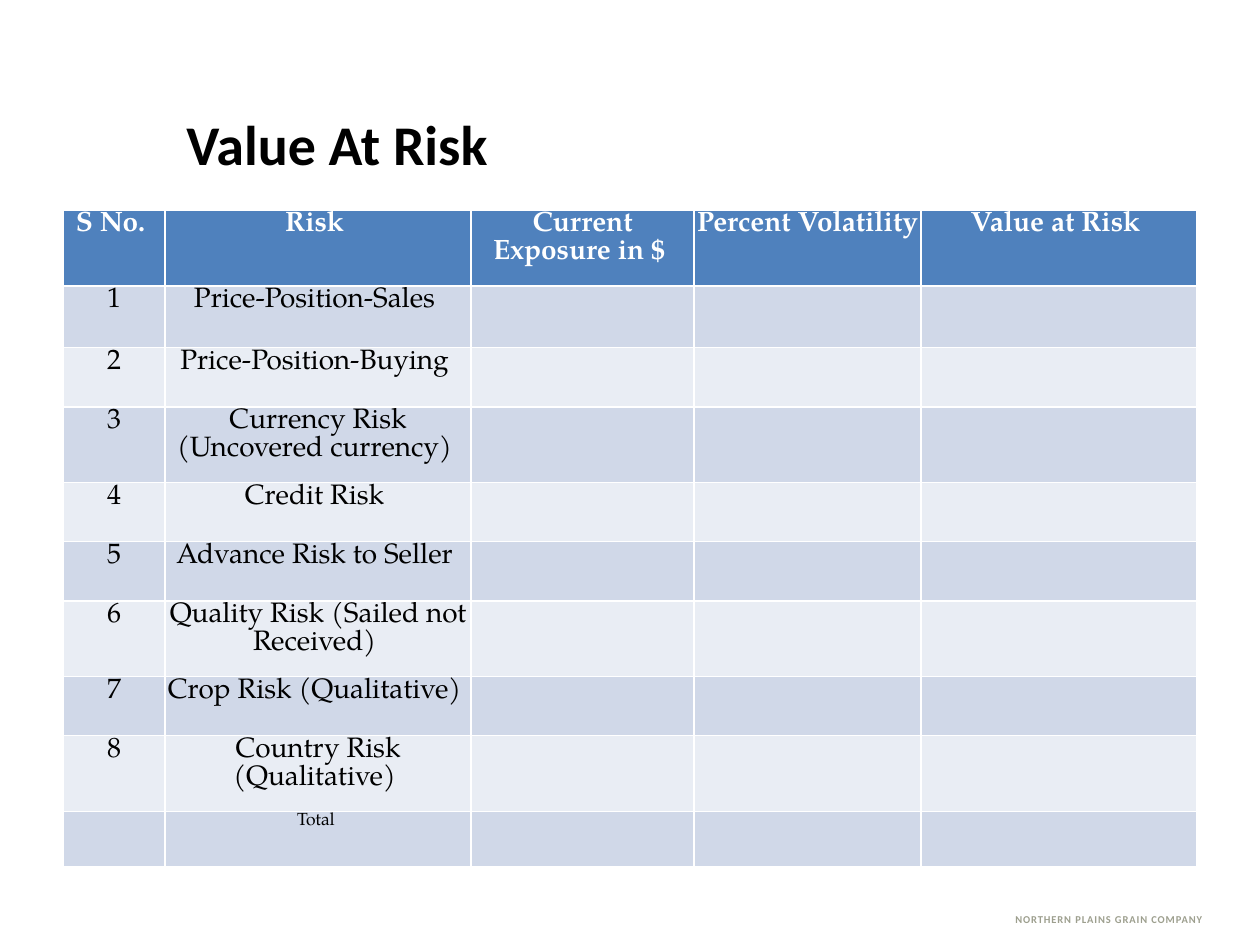
from lxml.etree import SubElement
from pptx import Presentation
from pptx.dml.color import RGBColor
from pptx.enum.text import MSO_ANCHOR as Anchor, MSO_AUTO_SIZE as AutoSize, PP_ALIGN as Align
from pptx.oxml.ns import qn
from pptx.util import Inches, Pt

TABLE_FONT = "TeX Gyre Pagella"
COL_WIDTHS = [0.81, 2.43, 1.77, 1.8, 2.19]
ROW_HEIGHTS = [0.6, 0.49, 0.47, 0.6, 0.47, 0.47, 0.6, 0.47, 0.6, 0.44]
HEADERS = ["S No. ", "Risk ", "Current Exposure in $ ", "Percent Volatility ", "Value at Risk "]
RISKS = [
    "Price-Position-Sales ",
    "Price-Position-Buying ",
    "Currency Risk (Uncovered currency) ",
    "Credit Risk ",
    "Advance Risk to Seller ",
    "Quality Risk (Sailed not Received) ",
    "Crop Risk (Qualitative) ",
    "Country Risk (Qualitative) ",
]


def rgb(value):
    """Return the colour for a hex string."""
    return RGBColor.from_string(value)


def add_run(p, text, size, font, color, bold=False):
    """Append a formatted run to a paragraph and return it."""
    r = p.add_run()
    r.text = text
    r.font.size = Pt(size)
    r.font.name = font
    r.font.bold = bold
    r.font.color.rgb = rgb(color)
    return r


def add_title(slide, left, top, width, height):
    """Place the slide title in the title placeholder."""
    sp = slide.shapes.title
    sp.left, sp.top, sp.width, sp.height = map(Inches, (left, top, width, height))
    tf = sp.text_frame
    tf.word_wrap = True
    tf.auto_size = AutoSize.NONE
    tf.vertical_anchor = Anchor.TOP
    p = tf.paragraphs[0]
    p.alignment = Align.LEFT
    add_run(p, "Value At Risk", 32, "Calibri", "000000", True)


def set_borders(cell, widths):
    """Draw white cell borders from a mapping of side to points."""
    tcPr = cell._tc.get_or_add_tcPr()
    for i, side in enumerate("LRTB"):
        ln = SubElement(tcPr, qn(f"a:ln{side}"), w=str(Pt(widths.get(side, 1))))
        fill = SubElement(ln, qn("a:solidFill"))
        SubElement(fill, qn("a:srgbClr"), val="FFFFFF")
        tcPr.remove(ln)
        tcPr.insert(i, ln)


def fill_cell(cell, row, text, size):
    """Format one table cell according to its row and write its text."""
    header = row == 0
    cell.fill.solid()
    cell.fill.fore_color.rgb = rgb("4F81BD" if header else "D0D8E8" if row % 2 else "E9EDF4")
    set_borders(cell, {0: {"B": 1.5}, 1: {"T": 1.5}}.get(row, {}))
    if text:
        cell.margin_left = cell.margin_right = cell.margin_top = Inches(0.01)
        cell.margin_bottom = 0
        p = cell.text_frame.paragraphs[0]
        p.alignment = Align.CENTER
        add_run(p, text, size, TABLE_FONT, "FFFFFF" if header else "000000", header)


def add_risk_table(slide, left, top, width, height):
    """Place the table of risks with its header and total rows."""
    rows = [HEADERS]
    rows += [[str(n), risk, "", "", ""] for n, risk in enumerate(RISKS, 1)]
    rows.append(["", "Total ", "", "", ""])
    table = slide.shapes.add_table(
        len(rows), len(HEADERS), Inches(left), Inches(top), Inches(width), Inches(height)
    ).table
    for col, w in zip(table.columns, COL_WIDTHS):
        col.width = Inches(w)
    for row, h in zip(table.rows, ROW_HEIGHTS):
        row.height = Inches(h)
    for i, texts in enumerate(rows):
        size = 10 if i == len(rows) - 1 else 16
        for j, text in enumerate(texts):
            fill_cell(table.cell(i, j), i, text, size)


def add_footer(slide, left, top, width, height):
    """Place the small company line at the bottom right."""
    tf = slide.shapes.add_textbox(*map(Inches, (left, top, width, height))).text_frame
    tf.word_wrap = False
    tf.auto_size = AutoSize.SHAPE_TO_FIT_TEXT
    p = tf.paragraphs[0]
    r = add_run(p, "NORTHERN PLAINS GRAIN COMPANY", 6, "Calibri", "9D9F8E", True)
    r.font._element.set("spc", "50")


def main():
    """Build the slide and save it."""
    prs = Presentation()
    prs.slide_width, prs.slide_height = Inches(10), Inches(7.5)
    slide = prs.slides.add_slide(prs.slide_layouts[5])
    add_footer(slide, 7.96, 7.2, 1.8, 0.2)
    add_title(slide, 1.38, 0.82, 8.2, 0.61)
    add_risk_table(slide, 0.5, 1.67, 9, 5.19)
    prs.save("out.pptx")


if __name__ == "__main__":
    main()
